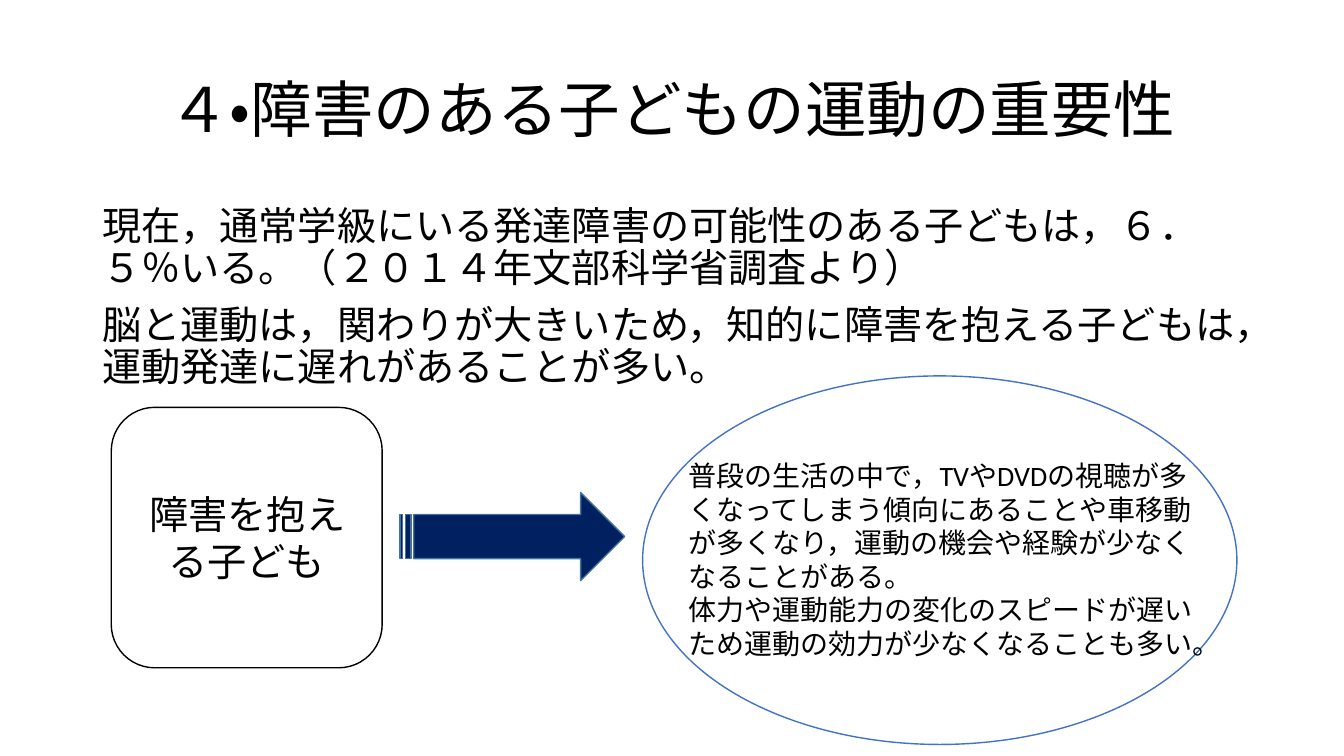
"""Build a slide on why exercise matters for children with disabilities."""
import pptx
import pptx.dml.color
import pptx.enum.lang
import pptx.enum.shapes
import pptx.enum.text
import pptx.util

PX = 9525
FONT = "Calibri"
COLORS = {
    "white": "FFFFFF",
    "black": "000000",
    "blue": "4472C4",
    "navy": "002060",
    "steel": "43739E",
}
SHAPE = pptx.enum.shapes.MSO_SHAPE
ALIGN = pptx.enum.text.PP_ALIGN
ANCHOR = pptx.enum.text.MSO_ANCHOR


def add_figure(kind, box, fill, line):
    sp = slide.shapes.add_shape(kind, *(v * PX for v in box))
    sp.shadow.inherit = False
    sp.fill.solid()
    sp.fill.fore_color.rgb = pptx.dml.color.RGBColor.from_string(COLORS[fill])
    sp.line.color.rgb = pptx.dml.color.RGBColor.from_string(COLORS[line])
    sp.line.width = pptx.util.Pt(1)
    return sp


def write_text(sp, lines, size, align, anchor, spacing=1.0, before=0):
    tf = sp.text_frame
    tf.word_wrap = True
    tf.vertical_anchor = anchor
    for i, line in enumerate(lines):
        p = tf.add_paragraph() if i else tf.paragraphs[0]
        p.alignment = align
        p.line_spacing = spacing
        p.space_before = pptx.util.Pt(before)
        r = p.add_run()
        r.text = line
        r.font.name = FONT
        r.font.size = pptx.util.Pt(size)
        r.font.language_id = pptx.enum.lang.MSO_LANGUAGE_ID.JAPANESE
        r.font.color.rgb = pptx.dml.color.RGBColor.from_string(COLORS["black"])


prs = pptx.Presentation()
prs.slide_width = 1280 * PX
prs.slide_height = 720 * PX
slide = prs.slides.add_slide(prs.slide_layouts[6])

add_figure(SHAPE.OVAL, (612, 358, 566, 351), "white", "blue")

title = slide.shapes.add_textbox(88 * PX, 38 * PX, 1104 * PX, 139 * PX)
write_text(title, ["４・障害のある子どもの運動の重要性"], 44, ALIGN.CENTER, ANCHOR.MIDDLE, 0.9)

body = slide.shapes.add_textbox(88 * PX, 192 * PX, 1104 * PX, 457 * PX)
write_text(body, [
    "現在，通常学級にいる発達障害の可能性のある子どもは，６．５％いる。（２０１４年文部科学省調査より）",
    "脳と運動は，関わりが大きいため，知的に障害を抱える子どもは，運動発達に遅れがあることが多い。",
], 28, ALIGN.LEFT, ANCHOR.TOP, 0.9, 10)

child = add_figure(SHAPE.ROUNDED_RECTANGLE, (106, 388, 258, 248), "white", "black")
write_text(child, ["障害を抱える子ども"], 28, ALIGN.CENTER, ANCHOR.MIDDLE)

add_figure(SHAPE.STRIPED_RIGHT_ARROW, (381, 469, 214, 84), "navy", "steel")

reasons = slide.shapes.add_textbox(646 * PX, 432 * PX, 519 * PX, 204 * PX)
write_text(reasons, [
    "普段の生活の中で，TVやDVDの視聴が多くなってしまう傾向にあることや車移動が多くなり，運動の機会や経験が少なくなることがある。",
    "体力や運動能力の変化のスピードが遅いため運動の効力が少なくなることも多い。",
], 20, ALIGN.LEFT, ANCHOR.TOP)

prs.save("out.pptx")
